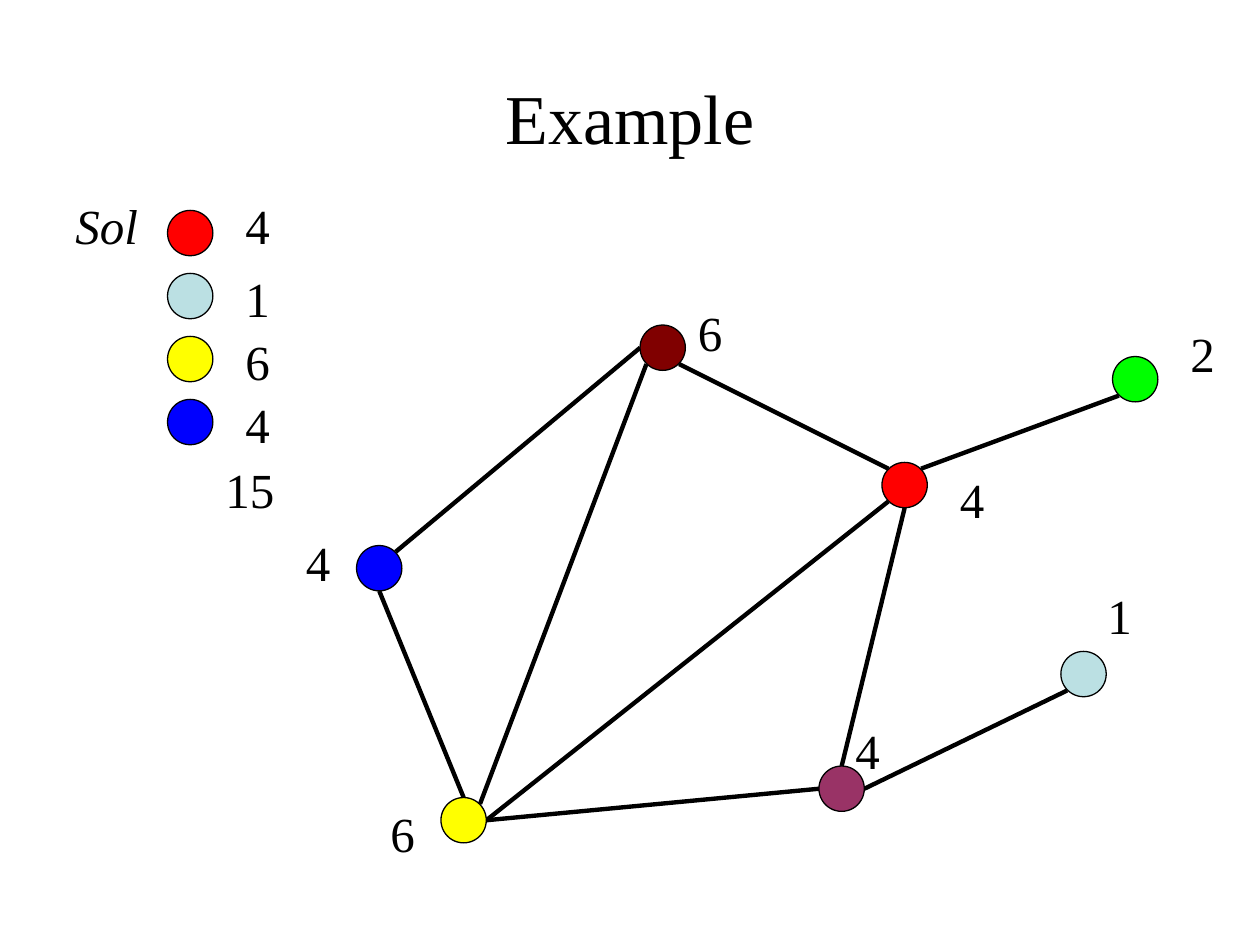
from pptx import Presentation
from pptx.dml.color import RGBColor
from pptx.enum.shapes import MSO_CONNECTOR, MSO_SHAPE
from pptx.enum.text import MSO_ANCHOR, MSO_AUTO_SIZE, PP_ALIGN
from pptx.util import Inches, Pt
from lxml import etree

DIAMETER = 0.36
RADIUS = DIAMETER / 2
DIAGONAL = 0.13
BLACK = "000000"


def color(value):
    return RGBColor.from_string(value)


def add_text(text, left, top, width, height=0.57, size=28, italic=False):
    box = page.shapes.add_textbox(Inches(left), Inches(top), Inches(width), Inches(height))
    frame = box.text_frame
    frame.word_wrap = False
    frame.auto_size = MSO_AUTO_SIZE.SHAPE_TO_FIT_TEXT
    span = frame.paragraphs[0].add_run()
    span.text = text
    span.font.name = "Times New Roman"
    span.font.size = Pt(size)
    span.font.italic = italic
    span.font.color.rgb = color(BLACK)
    return frame


deck = Presentation()
deck.slide_width = Inches(10)
deck.slide_height = Inches(7.5)
page = deck.slides.add_slide(deck.slide_layouts[6])

title = add_text("Example", 0.5, 0.3, 9, 1.25, 40)
title.word_wrap = True
title.auto_size = MSO_AUTO_SIZE.NONE
title.vertical_anchor = MSO_ANCHOR.MIDDLE
title.paragraphs[0].alignment = PP_ALIGN.CENTER

nodes = {
    "blue": (2.83, 4.33, "0000FF"),
    "green": (8.83, 2.83, "00FF00"),
    "red": (7, 3.67, "FF0000"),
    "maroon": (5.08, 2.58, "800000"),
    "purple": (6.5, 6.08, "993366"),
    "yellow": (3.5, 6.33, "FFFF00"),
    "pale": (8.42, 5.17, "BBE0E3"),
}
sites = {
    "top": (0, -RADIUS),
    "bottom": (0, RADIUS),
    "left": (-RADIUS, 0),
    "right": (RADIUS, 0),
    "top left": (-DIAGONAL, -DIAGONAL),
    "top right": (DIAGONAL, -DIAGONAL),
    "bottom left": (-DIAGONAL, DIAGONAL),
    "bottom right": (DIAGONAL, DIAGONAL),
}
edges = [
    ("red", "bottom left", "yellow", "right"),
    ("red", "top left", "maroon", "bottom right"),
    ("purple", "left", "yellow", "right"),
    ("blue", "bottom", "yellow", "top"),
    ("red", "bottom", "purple", "top"),
    ("maroon", "left", "blue", "top right"),
    ("green", "bottom left", "red", "top right"),
    ("maroon", "bottom left", "yellow", "top right"),
    ("pale", "bottom left", "purple", "right"),
]
for start, start_site, end, end_site in edges:
    points = []
    for node, site in ((start, start_site), (end, end_site)):
        for corner, offset in zip(nodes[node][:2], sites[site]):
            points.append(Inches(corner + RADIUS + offset))
    edge = page.shapes.add_connector(MSO_CONNECTOR.STRAIGHT, *points)
    edge.line.color.rgb = color(BLACK)
    edge.line.width = Pt(2.5)
    properties = edge.element.spPr
    etree.SubElement(properties, "{http://schemas.openxmlformats.org/drawingml/2006/main}effectLst")

solution = ["red", "pale", "yellow", "blue"]
circles = list(nodes.values())
for row, name in enumerate(solution):
    circles.append((1.33, 1.67 + 0.5 * row, nodes[name][2]))
for left, top, fill in circles:
    circle = page.shapes.add_shape(
        MSO_SHAPE.OVAL, Inches(left), Inches(top), Inches(DIAMETER), Inches(DIAMETER)
    )
    circle.shadow.inherit = False
    circle.fill.solid()
    circle.fill.fore_color.rgb = color(fill)
    circle.line.color.rgb = color(BLACK)
    circle.line.width = Pt(0.75)

add_text("Sol", 0.5, 1.5, 0.7, italic=True)
add_text("15", 1.69, 3.6, 0.59)
weights = [
    ("4", 1.85, 1.5),
    ("1", 1.85, 2.08),
    ("6", 1.85, 2.58),
    ("4", 1.85, 3.08),
    ("6", 5.44, 2.35),
    ("2", 9.35, 2.52),
    ("4", 7.52, 3.68),
    ("1", 8.69, 4.6),
    ("6", 3, 6.33),
    ("4", 6.69, 5.67),
    ("4", 2.33, 4.18),
]
for weight, left, top in weights:
    add_text(weight, left, top, 0.4)

deck.save("out.pptx")
